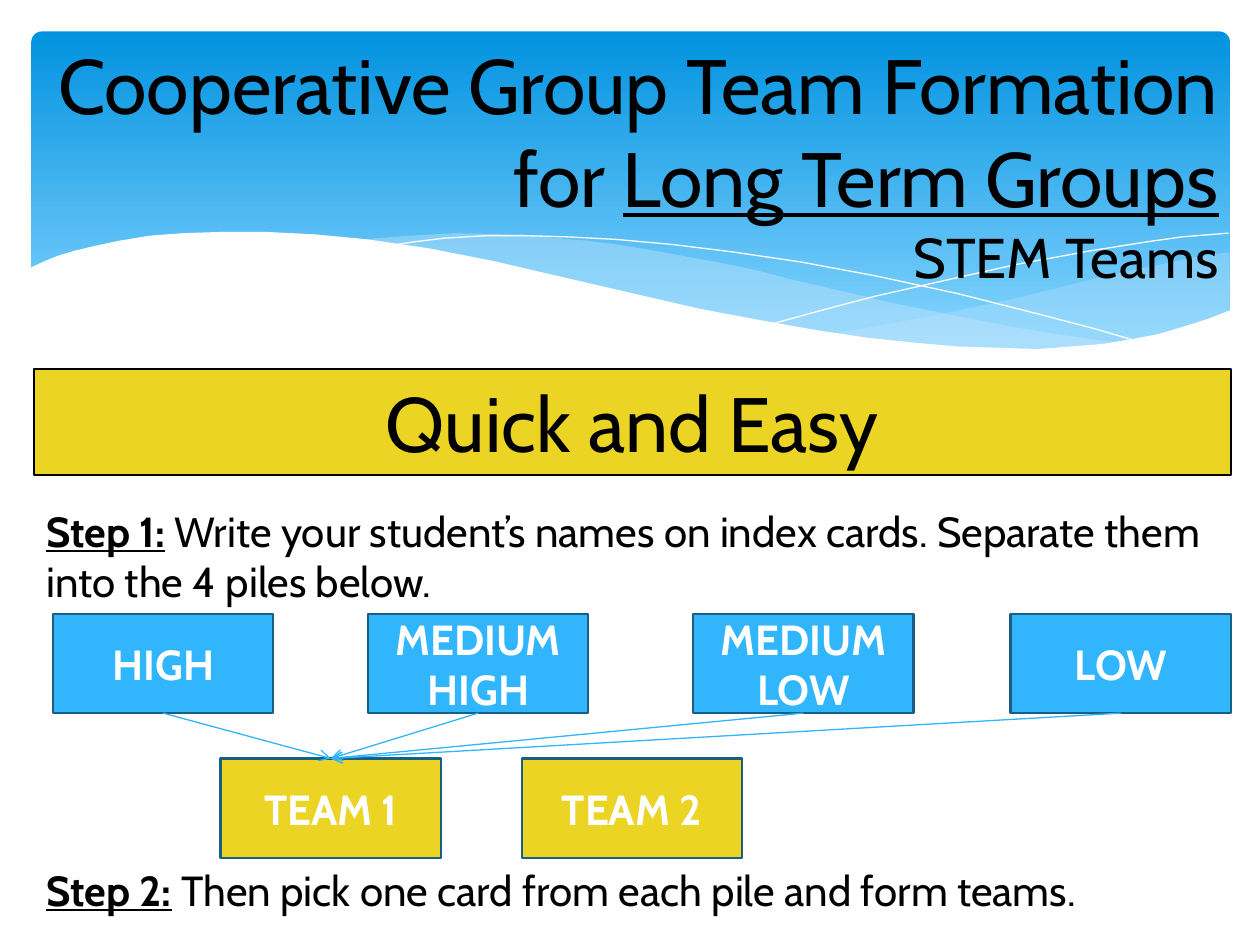
from typing import NamedTuple

from lxml import etree
from pptx import Presentation
from pptx.dml.color import RGBColor
from pptx.enum.shapes import MSO_CONNECTOR, MSO_SHAPE
from pptx.enum.text import MSO_ANCHOR, MSO_AUTO_SIZE, PP_ALIGN
from pptx.oxml.ns import qn
from pptx.util import Pt

RECT, ROUNDED = MSO_SHAPE.RECTANGLE, MSO_SHAPE.ROUNDED_RECTANGLE
STRAIGHT = MSO_CONNECTOR.STRAIGHT
LEFT, CENTER, RIGHT = PP_ALIGN.LEFT, PP_ALIGN.CENTER, PP_ALIGN.RIGHT
TOP, MIDDLE = MSO_ANCHOR.TOP, MSO_ANCHOR.MIDDLE
GROW = MSO_AUTO_SIZE.SHAPE_TO_FIT_TEXT

PX = 9144  # EMU per px, 100 px to the inch
FONT = "Cabin"
BLACK, WHITE = "000000", "FFFFFF"
BLUE, YELLOW, EDGE, PALE = "31B6FD", "ECD424", "195F84", "C6E7FC"
BOX_W, BOX_H = 175, 79
PILE_Y, TEAM_Y = 487, 602
BODY_X, BODY_W = 27, 950
BOTTOM_SITE, TOP_SITE = 2, 0


class Box(NamedTuple):
    label: str
    x: int
    y: int
    fill: str


class Wave(NamedTuple):
    points: list[tuple[int, int]]
    fill: str | None = None
    opacity: int = 100
    line: str | None = None


PILES = [
    Box("HIGH", 42, PILE_Y, BLUE),
    Box("MEDIUM HIGH", 292, PILE_Y, BLUE),
    Box("MEDIUM LOW", 550, PILE_Y, BLUE),
    Box("LOW", 802, PILE_Y, BLUE),
]
TEAMS = [Box("TEAM 1", 175, TEAM_Y, YELLOW), Box("TEAM 2", 414, TEAM_Y, YELLOW)]

WAVES = [
    # right-hand pale wave
    Wave([(976, 200), (948, 204), (921, 210), (891, 216), (861, 223), (805, 237),
          (753, 248), (706, 257), (661, 265), (691, 269), (719, 272), (745, 275),
          (781, 277), (814, 278), (844, 277), (872, 274), (897, 270), (921, 265),
          (942, 259), (963, 252), (976, 247)], PALE, 29),
    # middle pale wave
    Wave([(893, 273), (866, 269), (837, 265), (807, 260), (775, 254), (741, 247),
          (706, 240), (668, 231), (629, 222), (598, 214), (569, 208), (541, 203),
          (514, 198), (489, 194), (465, 191), (442, 189), (420, 187), (399, 186),
          (361, 185), (328, 187), (299, 189), (286, 191), (323, 196), (362, 203),
          (404, 211), (449, 222), (491, 232), (530, 240), (566, 248), (601, 255),
          (634, 261), (665, 266), (695, 270), (722, 274), (748, 276), (773, 277),
          (807, 278), (838, 278), (867, 276)], PALE, 40),
    # thin falling and rising curves
    Wave([(309, 195), (328, 192), (353, 189), (387, 187), (416, 187), (450, 188),
          (489, 190), (533, 194), (582, 200), (636, 208), (695, 219), (760, 233),
          (831, 251), (869, 261), (907, 272)], line=WHITE),
    Wave([(613, 257), (653, 246), (695, 235), (748, 223), (806, 210), (866, 199),
          (910, 192), (938, 188), (975, 185)], line=WHITE),
    # white lower edge of the banner
    Wave([(977, 246), (959, 253), (940, 259), (920, 265), (899, 269), (875, 273),
          (850, 275), (823, 277), (793, 276), (761, 275), (726, 272), (688, 268),
          (648, 262), (603, 254), (555, 245), (503, 233), (447, 220), (391, 207),
          (340, 197), (292, 190), (250, 186), (211, 184), (177, 184), (146, 185),
          (119, 187), (95, 191), (76, 195), (59, 199), (46, 203), (36, 207),
          (23, 213), (23, 329), (977, 329)], WHITE),
]


def rgb(color: str) -> RGBColor:
    return RGBColor.from_string(color)


def paint(sp, fill: str | None = None, line: str | None = None, width: float = 0) -> None:
    sp.shadow.inherit = False
    if fill:
        sp.fill.solid()
        sp.fill.fore_color.rgb = rgb(fill)
    else:
        sp.fill.background()
    if line:
        sp.line.color.rgb = rgb(line)
        sp.line.width = Pt(width)
    else:
        sp.line.fill.background()


def add_text(p, text: str, *, size: int, color: str = BLACK, bold: bool = False,
             underline: bool = False, align=LEFT) -> None:
    p.alignment = align
    r = p.add_run()
    r.text = text
    r.font.name, r.font.size = FONT, Pt(size)
    r.font.bold, r.font.underline = bold, underline
    r.font.color.rgb = rgb(color)


def add_frame(s, y: int, h: int):
    sp = s.shapes.add_textbox(BODY_X * PX, y * PX, BODY_W * PX, h * PX)
    tf = sp.text_frame
    tf.word_wrap, tf.auto_size, tf.vertical_anchor = True, GROW, TOP
    return sp


def add_step(s, label: str, text: str, y: int, h: int) -> None:
    p = add_frame(s, y, h).text_frame.paragraphs[0]
    add_text(p, label, size=24, bold=True, underline=True)
    add_text(p, text, size=24)


def add_banner(s) -> None:
    sp = s.shapes.add_shape(ROUNDED, 25 * PX, 25 * PX, 951 * PX, 270 * PX)
    sp.adjustments[0] = 0.03
    paint(sp)
    sp.fill.gradient()
    sp.fill.gradient_angle = 270
    for stop, position, color in zip(sp.fill.gradient_stops, (0, 0.9), ("0293E0", "83D3FE")):
        stop.position = position
        stop.color.rgb = rgb(color)


def add_wave(s, wave: Wave) -> None:
    builder = s.shapes.build_freeform(*wave.points[0], scale=PX)
    builder.add_line_segments(wave.points[1:], close=wave.fill is not None)
    sp = builder.convert_to_shape()
    paint(sp, wave.fill, wave.line)
    if wave.opacity < 100:
        color = sp.element.spPr.find(".//" + qn("a:srgbClr"))
        etree.SubElement(color, qn("a:alpha"), val=str(wave.opacity * 1000))


def add_box(s, box: Box):
    sp = s.shapes.add_shape(RECT, box.x * PX, box.y * PX, BOX_W * PX, BOX_H * PX)
    paint(sp, box.fill, EDGE, 1.25)
    tf = sp.text_frame
    tf.word_wrap, tf.vertical_anchor = True, MIDDLE
    add_text(tf.paragraphs[0], box.label, size=24, color=WHITE, bold=True, align=CENTER)
    return sp


def add_arrow(s, source, target) -> None:
    cx = s.shapes.add_connector(STRAIGHT, 0, 0, 0, 0)
    cx.begin_connect(source, BOTTOM_SITE)
    cx.end_connect(target, TOP_SITE)
    cx.line.color.rgb = rgb(BLUE)
    cx.line.width = Pt(0.75)
    etree.SubElement(cx.line._get_or_add_ln(), qn("a:tailEnd"), type="arrow")
    etree.SubElement(cx.element.spPr, qn("a:effectLst"))


def main() -> None:
    prs = Presentation()
    prs.slide_width, prs.slide_height = 1000 * PX, 750 * PX
    s = prs.slides.add_slide(prs.slide_layouts[6])

    # Banner
    add_banner(s)
    for wave in WAVES:
        add_wave(s, wave)

    # Title
    tf = add_frame(s, 25, 249).text_frame
    p = tf.paragraphs[0]
    add_text(p, "Cooperative Group Team Formation for ", size=44, align=RIGHT)
    add_text(p, "Long Term Groups", size=44, underline=True, align=RIGHT)
    add_text(tf.add_paragraph(), "STEM Teams", size=32, align=RIGHT)

    # Heading bar
    bar = add_frame(s, 293, 84)
    paint(bar, YELLOW, BLACK, 0.75)
    add_text(bar.text_frame.paragraphs[0], "Quick and Easy", size=44, align=CENTER)

    # Steps
    add_step(s, "Step 1:", " Write your student’s names on index cards. "
             "Separate them into the 4 piles below.", 396, 91)
    add_step(s, "Step 2:", " Then pick one card from each pile and form teams.", 681, 50)

    # Piles feeding the first team
    piles = [add_box(s, box) for box in PILES]
    teams = [add_box(s, box) for box in TEAMS]
    for pile in piles:
        add_arrow(s, pile, teams[0])

    prs.save("out.pptx")


if __name__ == "__main__":
    main()
